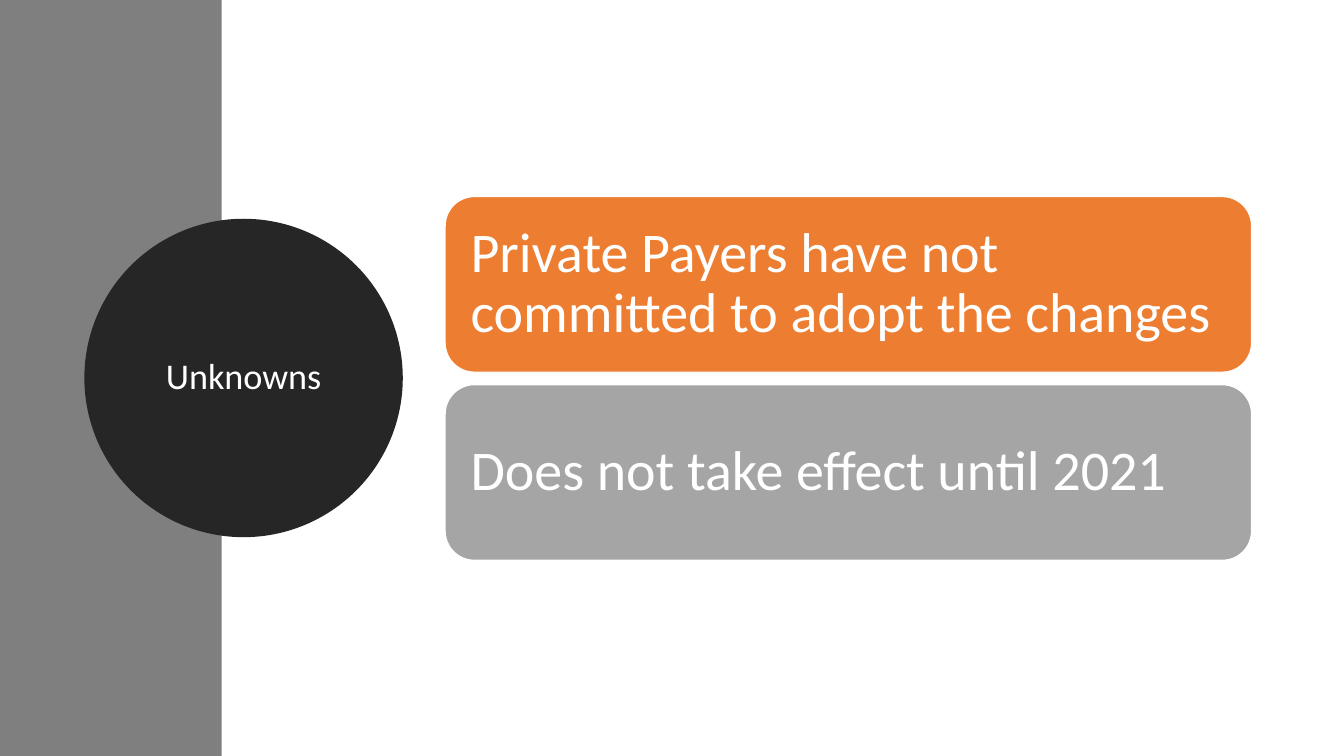
from pptx import Presentation
from pptx.dml.color import RGBColor
from pptx.enum.shapes import MSO_SHAPE as Shape
from pptx.enum.text import MSO_ANCHOR as Anchor, PP_ALIGN as Align
from pptx.util import Inches, Pt

COLORS = {
    "band": "7F7F7F",
    "circle": "262626",
    "orange": "ED7D31",
    "gray": "A5A5A5",
    "white": "FFFFFF",
}


def add_block(page, kind, area, fill, line=None, line_width=0):
    block = page.shapes.add_shape(kind, *[Inches(length) for length in area])
    block.shadow.inherit = False
    block.fill.solid()
    block.fill.fore_color.rgb = RGBColor.from_string(COLORS[fill])
    if line:
        block.line.color.rgb = RGBColor.from_string(COLORS[line])
        block.line.width = Pt(line_width)
    else:
        block.line.fill.background()
    return block


def write(block, text, size, align, inset):
    frame = block.text_frame
    layout = {"word_wrap": True, "vertical_anchor": Anchor.MIDDLE}
    for side in ("left", "top", "right", "bottom"):
        layout[f"margin_{side}"] = Inches(inset)
    for name, value in layout.items():
        setattr(frame, name, value)
    para = frame.paragraphs[0]
    para.alignment = align
    para.line_spacing = 0.9
    span = para.add_run()
    span.text = text
    for name, value in {"name": "Calibri", "size": Pt(size)}.items():
        setattr(span.font, name, value)
    span.font.color.rgb = RGBColor.from_string(COLORS["white"])


deck = Presentation()
deck.slide_width, deck.slide_height = Inches(16), Inches(9)
page = deck.slides.add_slide(deck.slide_layouts[6])

add_block(page, Shape.RECTANGLE, (0, 0, 2.64, 9), "band")

title = add_block(page, Shape.OVAL, (1.1, 2.7, 3.6, 3.6), "circle", "circle", 13.75)
write(title, "Unknowns", 31, Align.CENTER, 0.1)

unknowns = [
    ("Private Payers have not committed to adopt the changes", "orange"),
    ("Does not take effect until 2021", "gray"),
]
card_top, card_step = 2.34, 2.24
for row, (text, fill) in enumerate(unknowns):
    area = (5.3, card_top + row * card_step, 9.6, 2.09)
    card = add_block(page, Shape.ROUNDED_RECTANGLE, area, fill, "white", 1)
    write(card, text, 48, Align.LEFT, 0.2)

deck.save("out.pptx")
